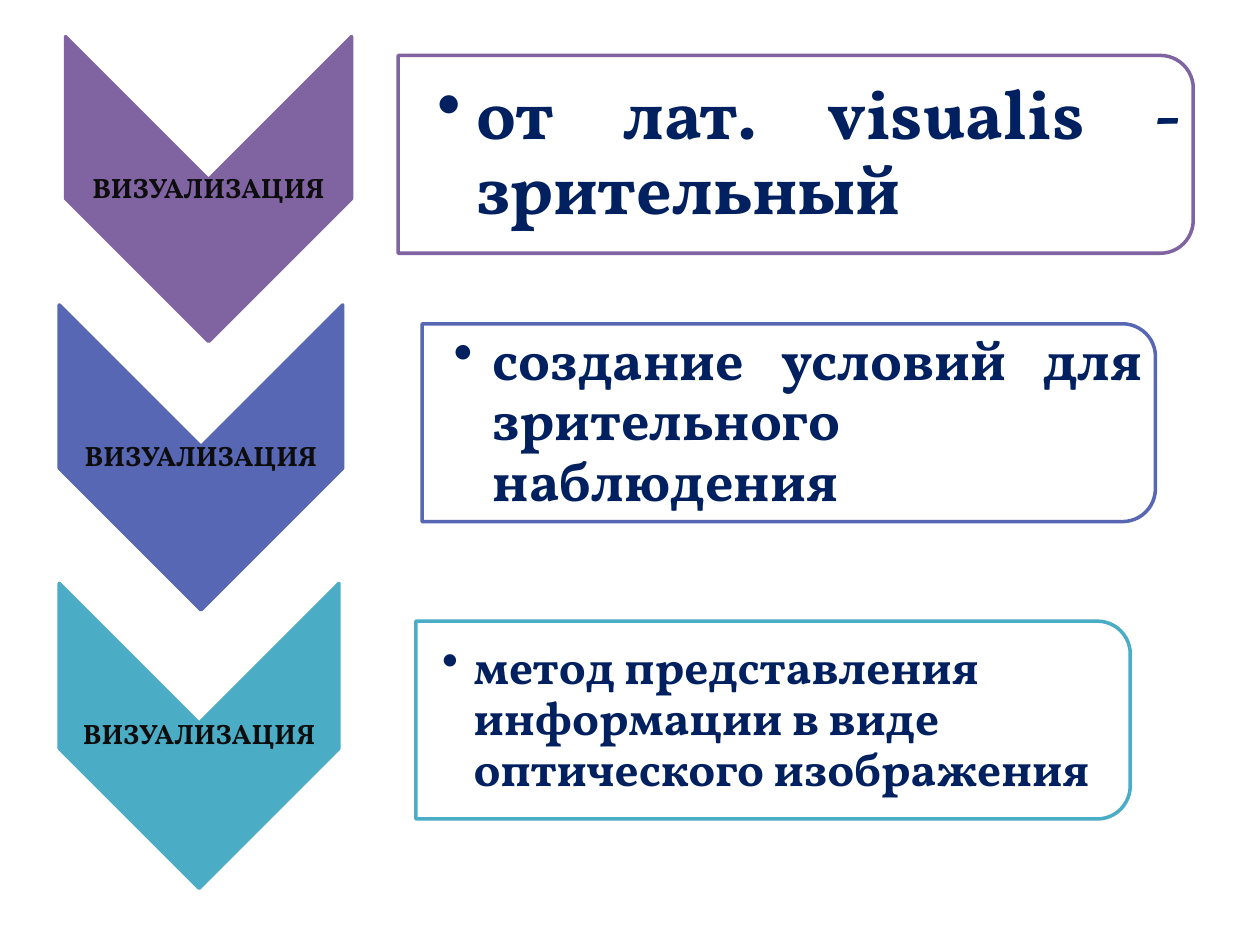
from lxml import etree
from pptx import Presentation
from pptx.dml.color import RGBColor
from pptx.enum.shapes import MSO_SHAPE
from pptx.enum.text import MSO_ANCHOR, PP_ALIGN
from pptx.oxml.ns import qn
from pptx.util import Inches, Pt

CHEVRON = MSO_SHAPE.CHEVRON
PANEL = MSO_SHAPE.ROUND_2_SAME_RECTANGLE
MIDDLE = MSO_ANCHOR.MIDDLE
CENTER, JUSTIFY, LEFT = PP_ALIGN.CENTER, PP_ALIGN.JUSTIFY, PP_ALIGN.LEFT

FONT = "Vollkorn"
LABEL = "ВИЗУАЛИЗАЦИЯ"
LABEL_COLOR, BODY_COLOR, WHITE = "0D0D0D", "002060", "FFFFFF"
CHEVRON_H, PANEL_H = 2.42, 1.57
CORNER_GAP = 0.08  # keeps panel text clear of the rounded corners

# colour, chevron (left, top, width), panel (left, top, width),
# text, size, alignment, left inset, bullet indent
ROWS = [
    ("8064A2", (0.52, 0.29, 2.27), (3.16, 0.44, 6.31),
     "от лат. visualis - зрительный", 40, JUSTIFY, 0.31, 0.31),
    ("5767B4", (0.47, 2.42, 2.25), (3.35, 2.57, 5.82),
     "создание условий для зрительного наблюдения", 32, JUSTIFY, 0.25, 0.31),
    ("4BACC6", (0.47, 4.63, 2.22), (3.3, 4.93, 5.67),
     "метод представления информации в виде оптического изображения",
     27, LEFT, 0.21, 0.25),
]


def rgb(value):
    return RGBColor.from_string(value)


def add_turned_shape(s, kind, left, top, width, height, fill, line):
    """Add a shape turned by 90 degrees that covers the given box."""
    x, y = left + (width - height) / 2, top + (height - width) / 2
    sp = s.shapes.add_shape(kind, Inches(x), Inches(y), Inches(height), Inches(width))
    sp.rotation = 90
    sp.shadow.inherit = False
    sp.fill.solid()
    sp.fill.fore_color.rgb = rgb(fill)
    sp.line.color.rgb = rgb(line)
    sp.line.width = Pt(2)
    return sp


def set_alpha(sp, percent):
    color = sp.fill._xPr.find(qn("a:solidFill"))[0]
    etree.SubElement(color, qn("a:alpha"), val=str(percent * 1000))


def set_space_after(p, percent):
    """Set space after a paragraph as a share of its line height."""
    after = etree.SubElement(p._p.get_or_add_pPr(), qn("a:spcAft"))
    etree.SubElement(after, qn("a:spcPct"), val=str(percent * 1000))


def set_bullet(p, indent):
    p.level = 1
    pPr = p._p.get_or_add_pPr()
    pPr.set("marL", str(Inches(indent)))
    pPr.set("indent", str(-Inches(indent)))
    etree.SubElement(pPr, qn("a:buChar"), char="•")


def add_text(s, box, text, size, color, align, after, inset, left_inset, indent=0):
    tb = s.shapes.add_textbox(*[Inches(v) for v in box])
    tf = tb.text_frame
    tf.word_wrap = True
    tf.vertical_anchor = MIDDLE
    tf.margin_top = tf.margin_right = tf.margin_bottom = Inches(inset)
    tf.margin_left = Inches(left_inset)
    p = tf.paragraphs[0]
    p.alignment = align
    p.line_spacing = 0.9
    set_space_after(p, after)
    if indent:
        set_bullet(p, indent)
    r = p.add_run()
    r.text = text
    r.font.name = FONT
    r.font.size = Pt(size)
    r.font.bold = True
    r.font.color.rgb = rgb(color)


def add_label_chevron(s, left, top, width, color):
    add_turned_shape(s, CHEVRON, left, top, width, CHEVRON_H, color, color)
    # The label fills the strip between the notch and the lower shoulders.
    box = (left, top + width / 2, width, CHEVRON_H - width)
    add_text(s, box, LABEL, 16, LABEL_COLOR, CENTER, 35, 0.01, 0.01)


def add_panel(s, left, top, width, color, text, size, align, left_inset, indent):
    sp = add_turned_shape(s, PANEL, left, top, width, PANEL_H, WHITE, color)
    set_alpha(sp, 90)
    box = (left, top + CORNER_GAP, width - CORNER_GAP, PANEL_H - 2 * CORNER_GAP)
    add_text(s, box, text, size, BODY_COLOR, align, 15, 0.02, left_inset, indent)


def main():
    prs = Presentation()
    prs.slide_width, prs.slide_height = Inches(10), Inches(7.5)
    s = prs.slides.add_slide(prs.slide_layouts[6])
    for color, chevron, panel, *body in ROWS:
        add_label_chevron(s, *chevron, color)
        add_panel(s, *panel, color, *body)
    prs.save("out.pptx")


if __name__ == "__main__":
    main()
